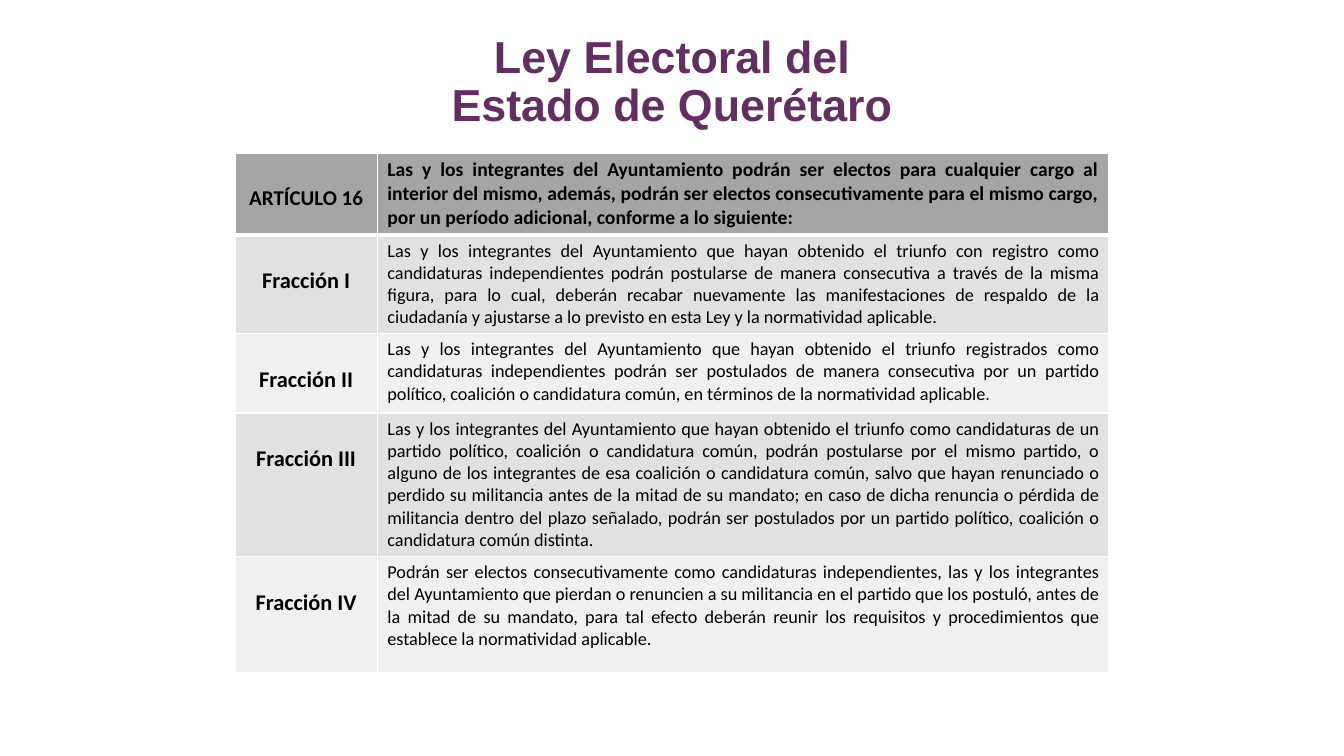
from lxml.etree import SubElement
from pptx import Presentation
from pptx.dml.color import RGBColor
from pptx.enum.text import MSO_ANCHOR as Anchor, PP_ALIGN as Align
from pptx.oxml.ns import qn
from pptx.util import Cm, Pt

TITLE = "Ley Electoral del Estado de Querétaro"
ROWS = [
    ("ARTÍCULO 16", "Las y los integrantes del Ayuntamiento podrán ser electos para cualquier cargo al interior del mismo, además, podrán ser electos consecutivamente para el mismo cargo, por un período adicional, conforme a lo siguiente:"),
    ("Fracción I", "Las y los integrantes del Ayuntamiento que hayan obtenido el triunfo con registro como candidaturas independientes podrán postularse de manera consecutiva a través de la misma figura, para lo cual, deberán recabar nuevamente las manifestaciones de respaldo de la ciudadanía y ajustarse a lo previsto en esta Ley y la normatividad aplicable."),
    ("Fracción II", "Las y los integrantes del Ayuntamiento que hayan obtenido el triunfo registrados como candidaturas independientes podrán ser postulados de manera consecutiva por un partido político, coalición o candidatura común, en términos de la normatividad aplicable."),
    ("Fracción III", "Las y los integrantes del Ayuntamiento que hayan obtenido el triunfo como candidaturas de un partido político, coalición o candidatura común, podrán postularse por el mismo partido, o alguno de los integrantes de esa coalición o candidatura común, salvo que hayan renunciado o perdido su militancia antes de la mitad de su mandato; en caso de dicha renuncia o pérdida de militancia dentro del plazo señalado, podrán ser postulados por un partido político, coalición o candidatura común distinta."),
    ("Fracción IV", "Podrán ser electos consecutivamente como candidaturas independientes, las y los integrantes del Ayuntamiento que pierdan o renuncien a su militancia en el partido que los postuló, antes de la mitad de su mandato, para tal efecto deberán reunir los requisitos y procedimientos que establece la normatividad aplicable."),
]
COLUMN_WIDTHS = [3.59, 18.43]
ROW_HEIGHTS = [2.06, 2.48, 2.01, 3.61, 2.92]
HEADER_FILL = "A5A5A5"
BAND_FILLS = ["F0F0F0", "E1E1E1"]
BORDER = "FFFFFF"
LABEL_TOP = 0.82


def color(value):
    return RGBColor.from_string(value)


def write(frame, text, size, font="Calibri", fill="000000", bold=False,
          align=Align.CENTER, spacing=1.0):
    frame.word_wrap = True
    paragraph = frame.paragraphs[0]
    paragraph.alignment = align
    paragraph.line_spacing = spacing
    run = paragraph.add_run()
    run.text = text
    run.font.name = font
    run.font.size = Pt(size)
    run.font.bold = bold
    run.font.color.rgb = color(fill)


def add_borders(cell, **widths):
    properties = cell._tc.get_or_add_tcPr()
    for index, side in enumerate(("lnL", "lnR", "lnT", "lnB")):
        line = properties.makeelement(qn(f"a:{side}"), {"w": str(Pt(widths.get(side, 1)))})
        fill = SubElement(line, qn("a:solidFill"))
        SubElement(fill, qn("a:srgbClr"), val=BORDER)
        properties.insert(index, line)


def add_title(slide):
    box = slide.shapes.add_textbox(Cm(10.21), Cm(0.81), Cm(13.46), Cm(2.62))
    box.text_frame.vertical_anchor = Anchor.BOTTOM
    write(box.text_frame, TITLE, 32, font="Arial", fill="632E62", bold=True, spacing=0.9)


def add_articles(slide):
    frame = slide.shapes.add_table(len(ROWS), len(COLUMN_WIDTHS), Cm(5.92), Cm(3.86),
                                   Cm(sum(COLUMN_WIDTHS)), Cm(sum(ROW_HEIGHTS)))
    table = frame.table
    for column, width in zip(table.columns, COLUMN_WIDTHS):
        column.width = Cm(width)
    for index, (label, body) in enumerate(ROWS):
        header = index == 0
        table.rows[index].height = Cm(ROW_HEIGHTS[index])
        label_cell, body_cell = table.cell(index, 0), table.cell(index, 1)
        for cell in (label_cell, body_cell):
            cell.fill.solid()
            cell.fill.fore_color.rgb = color(HEADER_FILL if header else BAND_FILLS[index % 2])
            add_borders(cell, lnT=3 if index == 1 else 1, lnB=3 if header else 1)
        label_cell.margin_top = Cm(LABEL_TOP)
        write(label_cell.text_frame, label, 15 if header else 16, bold=True)
        write(body_cell.text_frame, body, 14 if header else 13, bold=header, align=Align.JUSTIFY)


def main():
    presentation = Presentation()
    presentation.slide_width = Cm(33.87)
    presentation.slide_height = Cm(19.05)
    slide = presentation.slides.add_slide(presentation.slide_layouts[6])
    add_title(slide)
    add_articles(slide)
    presentation.save("out.pptx")


if __name__ == "__main__":
    main()
